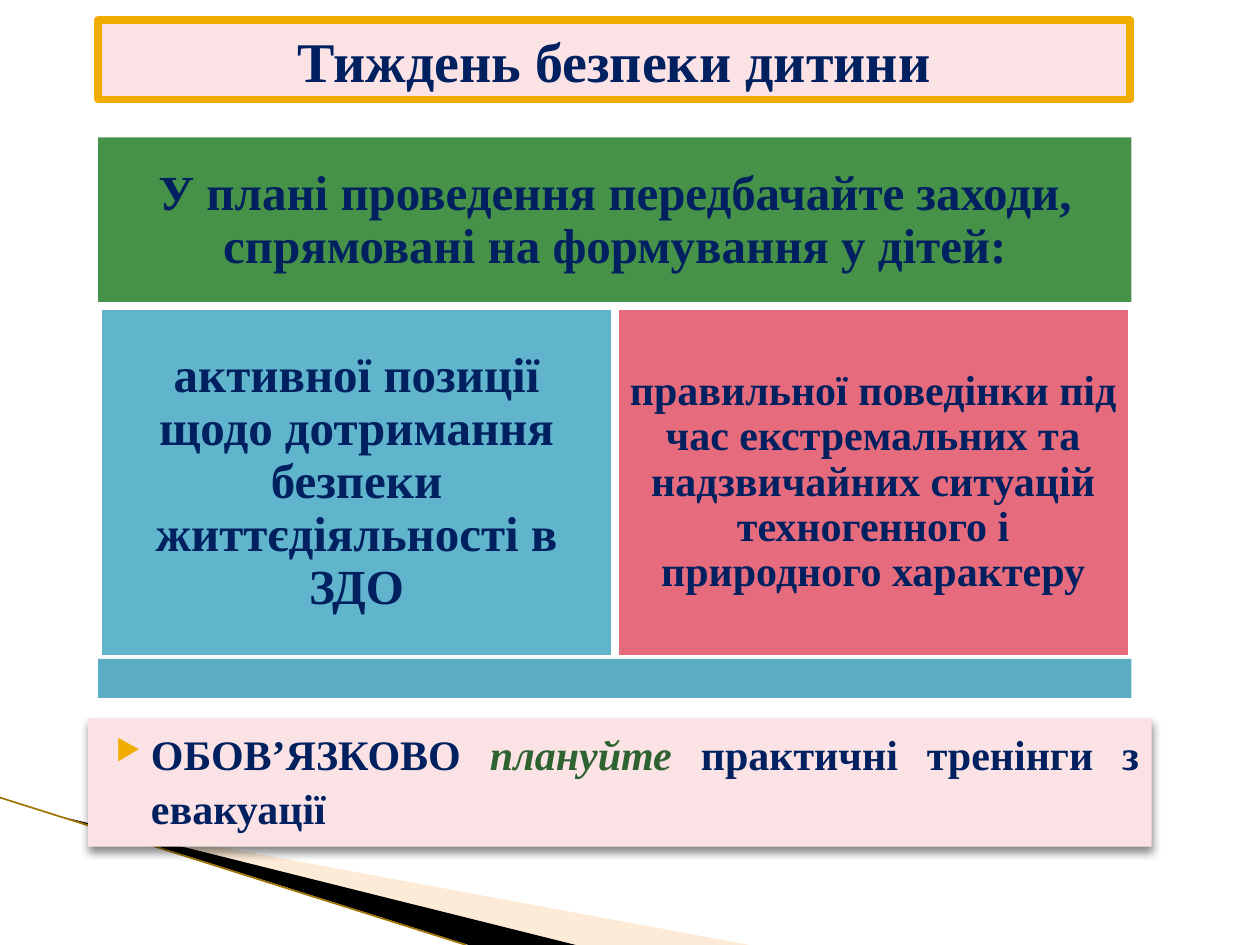
from dataclasses import dataclass
from typing import Optional

from lxml.etree import SubElement
from pptx import Presentation
from pptx.dml.color import RGBColor
from pptx.enum.shapes import MSO_CONNECTOR, MSO_SHAPE
from pptx.enum.text import MSO_ANCHOR, PP_ALIGN
from pptx.oxml.ns import qn
from pptx.util import Inches, Pt


@dataclass(frozen=True)
class Theme:
    font: str = "Times New Roman"
    navy: str = "002060"
    leaf: str = "2F6231"
    gold: str = "F0AD00"
    dark_gold: str = "9F7300"
    blush: str = "FAE2E5"
    green: str = "479249"
    blue: str = "60B5CC"
    rose: str = "E66C7D"
    teal: str = "5CADC3"
    peach: str = "FCCF9B"
    black: str = "000000"
    white: str = "FFFFFF"
    title_size: int = 32
    large_size: int = 28
    text_size: int = 24
    border: float = 4.33


@dataclass(frozen=True)
class Panel:
    left: float
    top: float
    width: float
    height: float
    fill: str
    text: str = ""
    size: int = 28
    border: Optional[str] = None
    inset: float = 0.12
    spacing: float = 0.9


@dataclass(frozen=True)
class Wedge:
    points: tuple
    fill: str
    opacity: Optional[int] = None


THEME = Theme()
LEFT, WIDTH = 0.78, 8.2
HALF = WIDTH / 2
WEDGES = (
    Wedge(((0.55, 6.5), (5.95, 7.5), (4.56, 7.5)), THEME.peach, 40),
    Wedge(((0.53, 6.49), (4.57, 7.5), (3.72, 7.5)), THEME.black),
)
NOTICE = Panel(0.7, 5.7, 8.44, 1.02, THEME.blush)
NOTICE_RUNS = (
    ("ОБОВ’ЯЗКОВО ", THEME.navy, False),
    ("плануйте ", THEME.leaf, True),
    ("практичні тренінги з евакуації", THEME.navy, False),
)
PANELS = (
    Panel(LEFT, 0.16, 8.19, 0.63, THEME.blush, "Тиждень безпеки дитини",
          THEME.title_size, THEME.gold, 0.05, 1.0),
    Panel(LEFT, 1.09, WIDTH, 1.33, THEME.green,
          "У плані проведення передбачайте заходи, спрямовані на формування у дітей:"),
    Panel(LEFT, 2.43, HALF, 2.8, THEME.blue,
          "активної позиції щодо дотримання безпеки життєдіяльності в ЗДО",
          border=THEME.white),
    Panel(LEFT + HALF, 2.43, HALF, 2.8, THEME.rose,
          "правильної поведінки під час екстремальних та надзвичайних ситуацій "
          "техногенного і природного характеру",
          THEME.text_size, THEME.white, 0.1),
    Panel(LEFT, 5.23, WIDTH, 0.31, THEME.teal),
)


def paint(shape, color: str) -> None:
    """Give a shape a flat fill with no outline or shadow."""
    shape.shadow.inherit = False
    shape.fill.solid()
    shape.fill.fore_color.rgb = RGBColor.from_string(color)
    shape.line.fill.background()


def style_run(run, size: int, color: str, italic: bool = False) -> None:
    """Apply the bold slide font to a run."""
    run.font.name = THEME.font
    run.font.size = Pt(size)
    run.font.bold = True
    run.font.italic = italic
    run.font.color.rgb = RGBColor.from_string(color)


def add_wedge(slide, wedge: Wedge) -> None:
    """Draw one corner wedge."""
    points = [(Inches(x), Inches(y)) for x, y in wedge.points]
    builder = slide.shapes.build_freeform(*points[0])
    builder.add_line_segments(points[1:], close=True)
    shape = builder.convert_to_shape()
    paint(shape, wedge.fill)
    if wedge.opacity is not None:
        color = shape.fill._xPr.find(qn("a:solidFill"))[0]
        SubElement(color, qn("a:alpha"), val=str(wedge.opacity * 1000))


def add_edge_line(slide) -> None:
    """Draw the thin line along the corner wedges."""
    line = slide.shapes.add_connector(
        MSO_CONNECTOR.STRAIGHT, Inches(0), Inches(6.33), Inches(3.7), Inches(7.5))
    line.line.color.rgb = RGBColor.from_string(THEME.dark_gold)
    line.line.width = Pt(0.95)
    SubElement(line._element.spPr, qn("a:effectLst"))


def add_panel(slide, panel: Panel):
    """Draw a rectangle with its centred text and return it."""
    shape = slide.shapes.add_shape(
        MSO_SHAPE.RECTANGLE, Inches(panel.left), Inches(panel.top),
        Inches(panel.width), Inches(panel.height))
    paint(shape, panel.fill)
    if panel.border:
        shape.line.color.rgb = RGBColor.from_string(panel.border)
        shape.line.width = Pt(THEME.border)
    if panel.text:
        frame = shape.text_frame
        frame.text = panel.text
        frame.word_wrap = True
        frame.vertical_anchor = MSO_ANCHOR.MIDDLE
        frame.margin_left = frame.margin_right = Inches(panel.inset)
        frame.margin_top = frame.margin_bottom = Inches(panel.inset)
        paragraph = frame.paragraphs[0]
        paragraph.alignment = PP_ALIGN.CENTER
        paragraph.line_spacing = panel.spacing
        style_run(paragraph.runs[0], panel.size, THEME.navy)
    return shape


def add_shadow(shape) -> None:
    """Add a soft shadow below a shape."""
    effects = shape._element.spPr.find(qn("a:effectLst"))
    shadow = SubElement(effects, qn("a:outerShdw"), blurRad=str(Pt(5)),
                        dist=str(Pt(3)), dir="5400000", rotWithShape="0")
    color = SubElement(shadow, qn("a:srgbClr"), val=THEME.black)
    SubElement(color, qn("a:alpha"), val="45000")


def add_bullet(paragraph) -> None:
    """Give a paragraph a hanging gold arrow bullet."""
    properties = paragraph._p.get_or_add_pPr()
    properties.set("marL", str(Inches(0.4)))
    properties.set("indent", str(Inches(-0.28)))
    color = SubElement(properties, qn("a:buClr"))
    SubElement(color, qn("a:srgbClr"), val=THEME.gold)
    SubElement(properties, qn("a:buSzPct"), val="68000")
    SubElement(properties, qn("a:buChar"), char="▶")


def add_notice(slide) -> None:
    """Draw the shadowed notice with its bullet."""
    shape = add_panel(slide, NOTICE)
    add_shadow(shape)
    frame = shape.text_frame
    frame.word_wrap = True
    frame.vertical_anchor = MSO_ANCHOR.TOP
    paragraph = frame.paragraphs[0]
    add_bullet(paragraph)
    paragraph.alignment = PP_ALIGN.JUSTIFY
    paragraph.line_spacing = 1.08
    for text, color, italic in NOTICE_RUNS:
        run = paragraph.add_run()
        run.text = text
        style_run(run, THEME.text_size, color, italic)


def main() -> None:
    """Build and save the slide."""
    presentation = Presentation()
    presentation.slide_width = Inches(10)
    presentation.slide_height = Inches(7.5)
    slide = presentation.slides.add_slide(presentation.slide_layouts[6])
    for wedge in WEDGES:
        add_wedge(slide, wedge)
    add_edge_line(slide)
    add_notice(slide)
    for panel in PANELS:
        add_panel(slide, panel)
    presentation.save("out.pptx")


if __name__ == "__main__":
    main()
